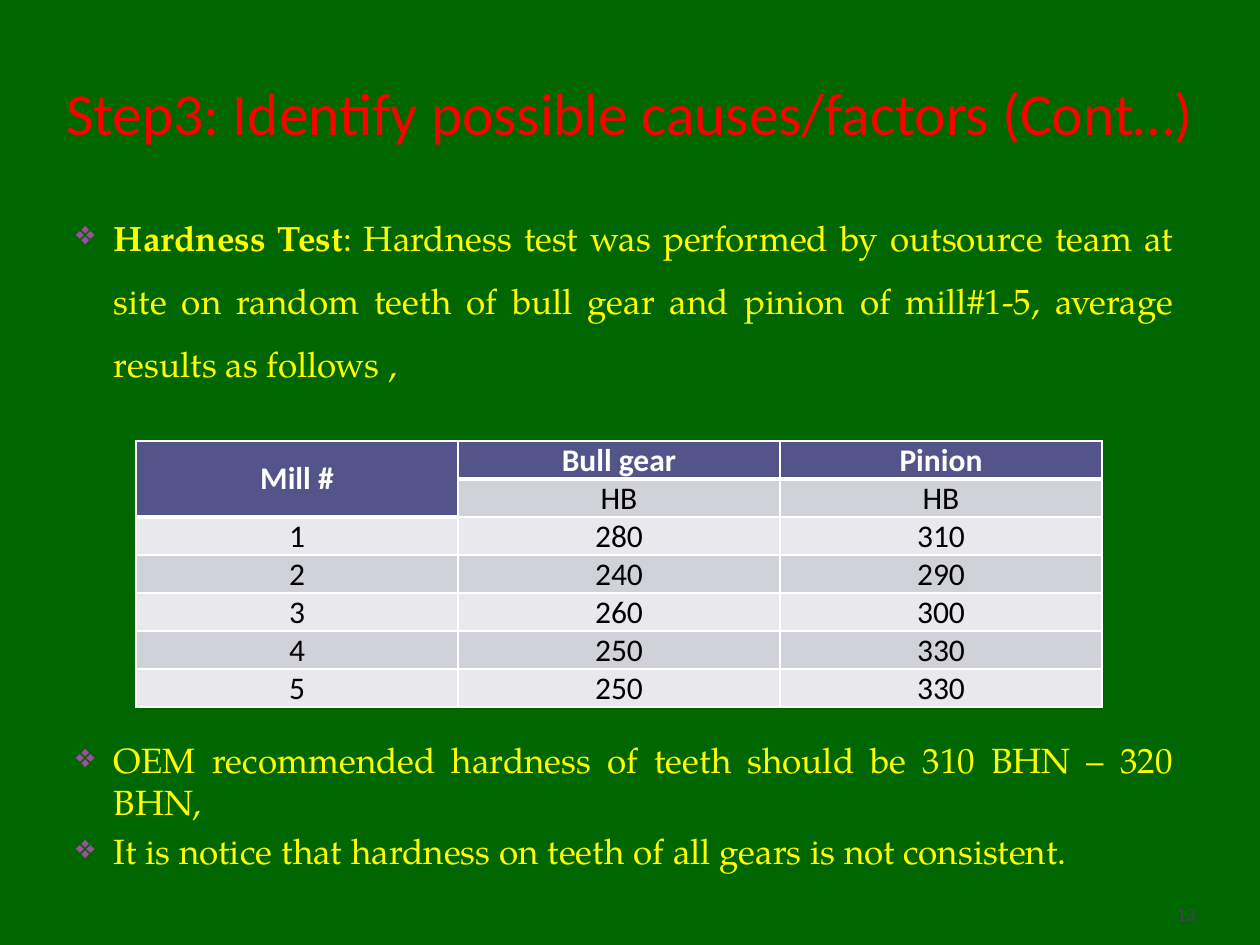
from dataclasses import dataclass

from lxml.etree import SubElement
from pptx import Presentation
from pptx.dml.color import RGBColor
from pptx.enum.text import MSO_ANCHOR as Anchor, PP_ALIGN as Align
from pptx.oxml.ns import qn
from pptx.util import Pt

EMU_PER_PX = 914400 / 126


def px(length):
    return round(length * EMU_PER_PX)


@dataclass(frozen=True)
class Theme:
    background: str = "006600"
    title: str = "FF0000"
    body: str = "FFFF00"
    bullet: str = "A04DA3"
    header: str = "53548A"
    bands: tuple = ("D1D1DA", "E9E9ED")
    border: str = "FFFFFF"
    header_text: str = "FFFFFF"
    cell_text: str = "000000"
    number: str = "424456"
    heading_font: str = "Calibri"
    body_font: str = "TeX Gyre Pagella"
    title_size: int = 34
    body_size: int = 20
    table_size: int = 18
    number_size: int = 11


class SlideBuilder:
    def __init__(self, slide, theme):
        self.slide = slide
        self.theme = theme
        fill = slide.background.fill
        fill.solid()
        fill.fore_color.rgb = RGBColor.from_string(theme.background)

    def add_run(self, paragraph, text, color, **font_values):
        run = paragraph.add_run()
        run.text = text
        for name, value in font_values.items():
            setattr(run.font, name, value)
        run.font.color.rgb = RGBColor.from_string(color)

    def text_frame(self, box, margins, anchor=Anchor.TOP):
        """Add a wrapping text box; margins run left, top, right, bottom."""
        frame = self.slide.shapes.add_textbox(*map(px, box)).text_frame
        left, top, right, bottom = map(px, margins)
        values = dict(word_wrap=True, vertical_anchor=anchor, margin_left=left,
                      margin_top=top, margin_right=right, margin_bottom=bottom)
        for name, value in values.items():
            setattr(frame, name, value)
        return frame

    def label(self, text, box, color, size, align, anchor):
        frame = self.text_frame(box, (0, 6, 0, 0), anchor)
        paragraph = frame.paragraphs[0]
        paragraph.alignment = align
        self.add_run(paragraph, text, color, size=Pt(size),
                     name=self.theme.heading_font)

    def bullets(self, items, box, line_spacing=1.0):
        """Each item is a list of (text, bold) runs."""
        theme = self.theme
        frame = self.text_frame(box, (13, 6, 13, 6))
        for index, runs in enumerate(items):
            paragraph = frame.add_paragraph() if index else frame.paragraphs[0]
            values = dict(alignment=Align.JUSTIFY, line_spacing=line_spacing,
                          space_before=Pt(theme.body_size * 0.2))
            for name, value in values.items():
                setattr(paragraph, name, value)
            self.add_bullet(paragraph, indent=38)
            for text, bold in runs:
                self.add_run(paragraph, text, theme.body, bold=bold,
                             size=Pt(theme.body_size), name=theme.body_font)

    def add_bullet(self, paragraph, indent):
        properties = paragraph._p.get_or_add_pPr()
        properties.set("marL", str(px(indent)))
        properties.set("indent", str(-px(indent)))
        color = SubElement(properties, qn("a:buClr"))
        SubElement(color, qn("a:srgbClr"), val=self.theme.bullet)
        SubElement(properties, qn("a:buSzPct"), val="95000")
        SubElement(properties, qn("a:buChar"), char="❖")

    def table(self, rows, box, header_cells):
        """Draw rows; cells whose (row, column) is in header_cells get the header look."""
        theme = self.theme
        shape = self.slide.shapes.add_table(len(rows), len(rows[0]), *map(px, box))
        table = shape.table
        for row_index, row in enumerate(rows):
            for column_index, text in enumerate(row):
                is_header = (row_index, column_index) in header_cells
                fill = theme.header if is_header else theme.bands[(row_index + 1) % 2]
                self.style_cell(table.cell(row_index, column_index), text, fill, is_header)
        return table

    def style_cell(self, cell, text, fill, is_header):
        theme = self.theme
        values = dict(vertical_anchor=Anchor.MIDDLE, margin_left=px(9),
                      margin_right=px(9), margin_top=0, margin_bottom=0)
        for name, value in values.items():
            setattr(cell, name, value)
        self.add_borders(cell, bottom_width=3 if is_header else 1)
        cell.fill.solid()
        cell.fill.fore_color.rgb = RGBColor.from_string(fill)
        paragraph = cell.text_frame.paragraphs[0]
        paragraph.alignment = Align.CENTER
        if text:
            color = theme.header_text if is_header else theme.cell_text
            self.add_run(paragraph, text, color, bold=is_header,
                         size=Pt(theme.table_size), name=theme.heading_font)
        else:
            paragraph.font.size = Pt(theme.table_size)

    def add_borders(self, cell, bottom_width):
        properties = cell._tc.get_or_add_tcPr()
        widths = dict(lnL=1, lnR=1, lnT=1, lnB=bottom_width)
        for side, width in widths.items():
            line = SubElement(properties, qn(f"a:{side}"), w=str(Pt(width)))
            SubElement(SubElement(line, qn("a:solidFill")), qn("a:srgbClr"),
                       val=self.theme.border)


def main():
    presentation = Presentation()
    presentation.slide_width, presentation.slide_height = px(1260), px(945)
    slide = presentation.slides.add_slide(presentation.slide_layouts[6])
    theme = Theme()
    builder = SlideBuilder(slide, theme)

    builder.label("Step3: Identify possible causes/factors (Cont…)", (63, 0, 1134, 147),
                  theme.title, theme.title_size, Align.CENTER, Anchor.BOTTOM)
    builder.bullets([[
        ("Hardness Test", True),
        (": Hardness test was performed by outsource team at site on random teeth of "
         "bull gear and pinion of mill#1-5, average results as follows ,", False),
    ]], (63, 189, 1124, 220), line_spacing=1.5)

    hardness_rows = [
        ("Mill #", "Bull gear", "Pinion"),
        ("", "HB", "HB"),
        ("1", "280", "310"),
        ("2", "240", "290"),
        ("3", "260", "300"),
        ("4", "250", "330"),
        ("5", "250", "330"),
    ]
    table = builder.table(hardness_rows, (136, 441, 966, 266),
                          header_cells={(0, 0), (0, 1), (0, 2), (1, 0)})
    table.cell(0, 0).merge(table.cell(1, 0))

    builder.bullets([
        [("OEM recommended hardness of teeth should be 310 BHN – 320 BHN,", False)],
        [("It is notice that hardness on teeth of all gears is not consistent.", False)],
    ], (63, 733, 1124, 149))
    builder.label("13", (1096, 895, 100, 32), theme.number, theme.number_size,
                  Align.RIGHT, Anchor.MIDDLE)
    presentation.save("out.pptx")


if __name__ == "__main__":
    main()
